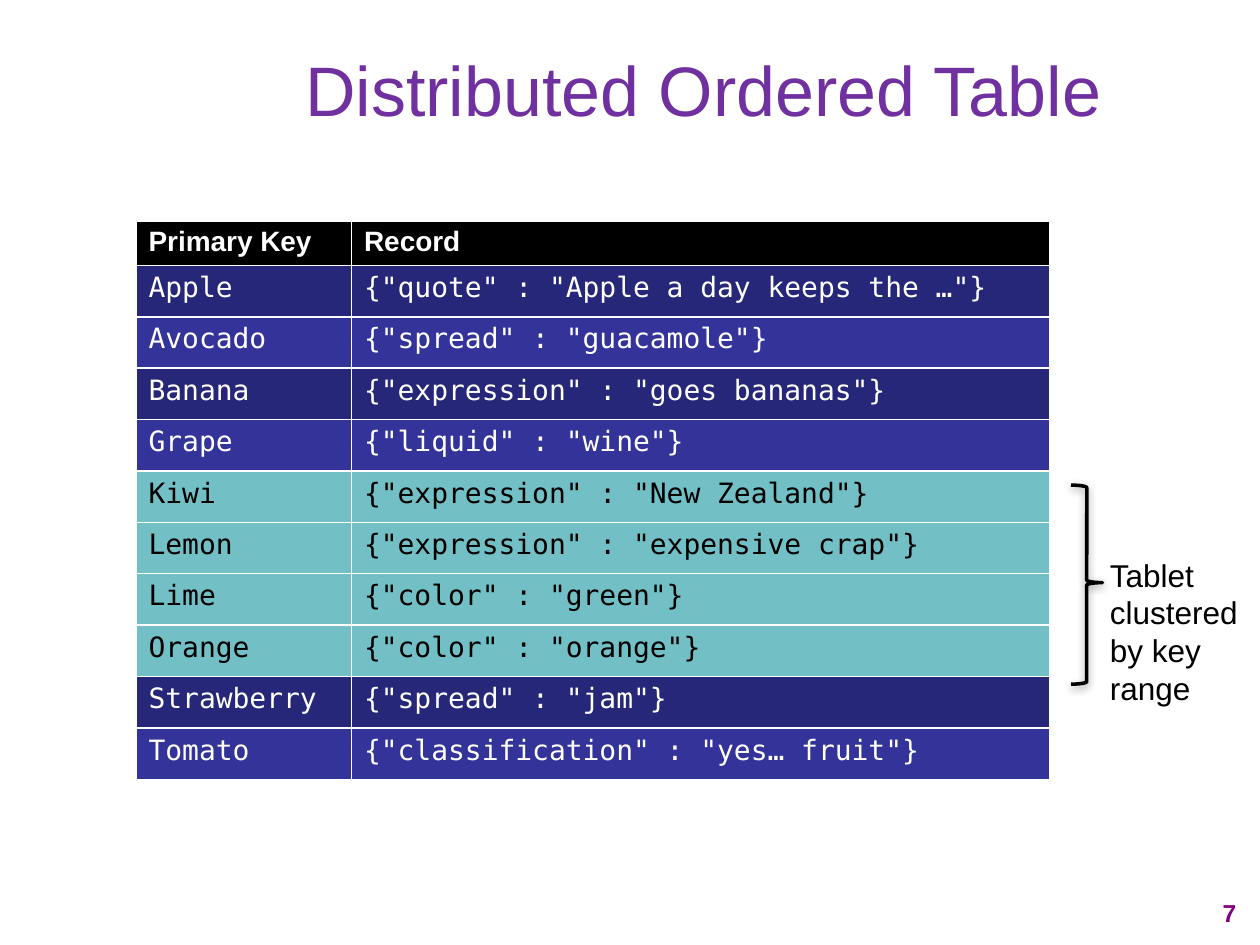
import lxml.etree
import pptx
import pptx.dml.color
import pptx.enum.shapes
import pptx.enum.text
import pptx.oxml.ns
import pptx.util

ALIGN = pptx.enum.text.PP_ALIGN
ANCHOR = pptx.enum.text.MSO_ANCHOR
BLACK, WHITE = "000000", "FFFFFF"
DARK, BLUE, TEAL = "272779", "333399", "72BFC5"

RECORDS = [
    ("Apple", '{"quote" : "Apple a day keeps the …"}'),
    ("Avocado", '{"spread" : "guacamole"}'),
    ("Banana", '{"expression" : "goes bananas"}'),
    ("Grape", '{"liquid" : "wine"}'),
    ("Kiwi", '{"expression" : "New Zealand"}'),
    ("Lemon", '{"expression" : "expensive crap"}'),
    ("Lime", '{"color" : "green"}'),
    ("Orange", '{"color" : "orange"}'),
    ("Strawberry", '{"spread" : "jam"}'),
    ("Tomato", '{"classification" : "yes… fruit"}'),
]
TABLET = {"Kiwi", "Lemon", "Lime", "Orange"}


def color(value):
    return pptx.dml.color.RGBColor.from_string(value)


def add_element(parent, tag, **attributes):
    return lxml.etree.SubElement(parent, pptx.oxml.ns.qn(tag), attributes)


class SlideBuilder:
    """Draws styled elements on a slide grid of 100 columns by 75 rows."""

    font = "Arial"
    code_font = "DejaVu Sans Mono"

    def __init__(self, presentation):
        self.slide = presentation.slides.add_slide(presentation.slide_layouts[6])
        self.column = presentation.slide_width / 100
        self.row = presentation.slide_height / 75

    def place(self, left, top, width, height):
        return [int(left * self.column), int(top * self.row),
                int(width * self.column), int(height * self.row)]

    def run(self, paragraph, text, size, ink, bold=False, font=None):
        run = paragraph.add_run()
        run.text = text
        run.font.name = font or self.font
        run.font.size = pptx.util.Pt(size)
        run.font.bold = bold
        run.font.color.rgb = color(ink)

    def text(self, box, text, size, ink, align=ALIGN.LEFT, anchor=ANCHOR.TOP, bold=False):
        frame = self.slide.shapes.add_textbox(*self.place(*box)).text_frame
        frame.word_wrap = True
        frame.vertical_anchor = anchor
        frame.paragraphs[0].alignment = align
        self.run(frame.paragraphs[0], text, size, ink, bold)

    def cell(self, cell, text, fill, ink, bold=False, font=None):
        properties = cell._tc.get_or_add_tcPr()
        for side in ("a:lnL", "a:lnR", "a:lnT", "a:lnB"):
            line = add_element(properties, side, w=str(pptx.util.Pt(1)))
            add_element(add_element(line, "a:solidFill"), "a:srgbClr", val=WHITE)
        cell.fill.solid()
        cell.fill.fore_color.rgb = color(fill)
        self.run(cell.text_frame.paragraphs[0], text, 16, ink, bold, font)

    def table(self, box, widths, header, header_height, records):
        height = (box[3] - header_height) / len(records)
        table = self.slide.shapes.add_table(
            len(records) + 1, len(header), *self.place(*box)).table
        for column, width in zip(table.columns, widths):
            column.width = int(width * self.column)
        for row in table.rows:
            row.height = int(height * self.row)
        table.rows[0].height = int(header_height * self.row)
        for cell, text in zip(table.rows[0].cells, header):
            cell.margin_top = cell.margin_bottom = int(0.4 * self.row)
            self.cell(cell, text, BLACK, WHITE, bold=True)
        for index, record in enumerate(records):
            fill, ink = (DARK, BLUE)[index % 2], WHITE
            if record[0] in TABLET:
                fill, ink = TEAL, BLACK
            for cell, text in zip(table.rows[index + 1].cells, record):
                self.cell(cell, text, fill, ink, font=self.code_font)

    def brace(self, box):
        brace = self.slide.shapes.add_shape(
            pptx.enum.shapes.MSO_SHAPE.RIGHT_BRACE, *self.place(*box))
        brace.adjustments[0], brace.adjustments[1] = 0.08, 0.49
        brace.fill.background()
        brace.line.color.rgb = color(BLACK)
        brace.line.width = pptx.util.Pt(2)
        brace.shadow.inherit = False
        effects = brace._element.spPr.find(pptx.oxml.ns.qn("a:effectLst"))
        shadow = add_element(effects, "a:outerShdw", blurRad=str(pptx.util.Pt(5)),
                             dist=str(pptx.util.Pt(1.6)), dir="5400000", rotWithShape="0")
        add_element(add_element(shadow, "a:srgbClr", val=BLACK), "a:alpha", val="38000")


def main():
    presentation = pptx.Presentation()
    presentation.slide_width = pptx.util.Inches(10)
    presentation.slide_height = pptx.util.Inches(7.5)
    builder = SlideBuilder(presentation)
    builder.text((93.3, 70.8, 5.8, 3.3), "7", 14, "800080", ALIGN.RIGHT, bold=True)
    builder.text((10.8, 0.8, 90, 12.5), "Distributed Ordered Table", 40, "7030A0",
                 ALIGN.CENTER, ANCHOR.MIDDLE)
    builder.table((10.8, 17.6, 72.5, 44.2), (17.1, 55.4), ("Primary Key", "Record"),
                  3.4, RECORDS)
    builder.brace((85, 38.5, 2.5, 15.8))
    builder.text((87.1, 43.6, 12.9, 13.1), "Tablet clustered by key range", 18, BLACK)
    presentation.save("out.pptx")


if __name__ == "__main__":
    main()
